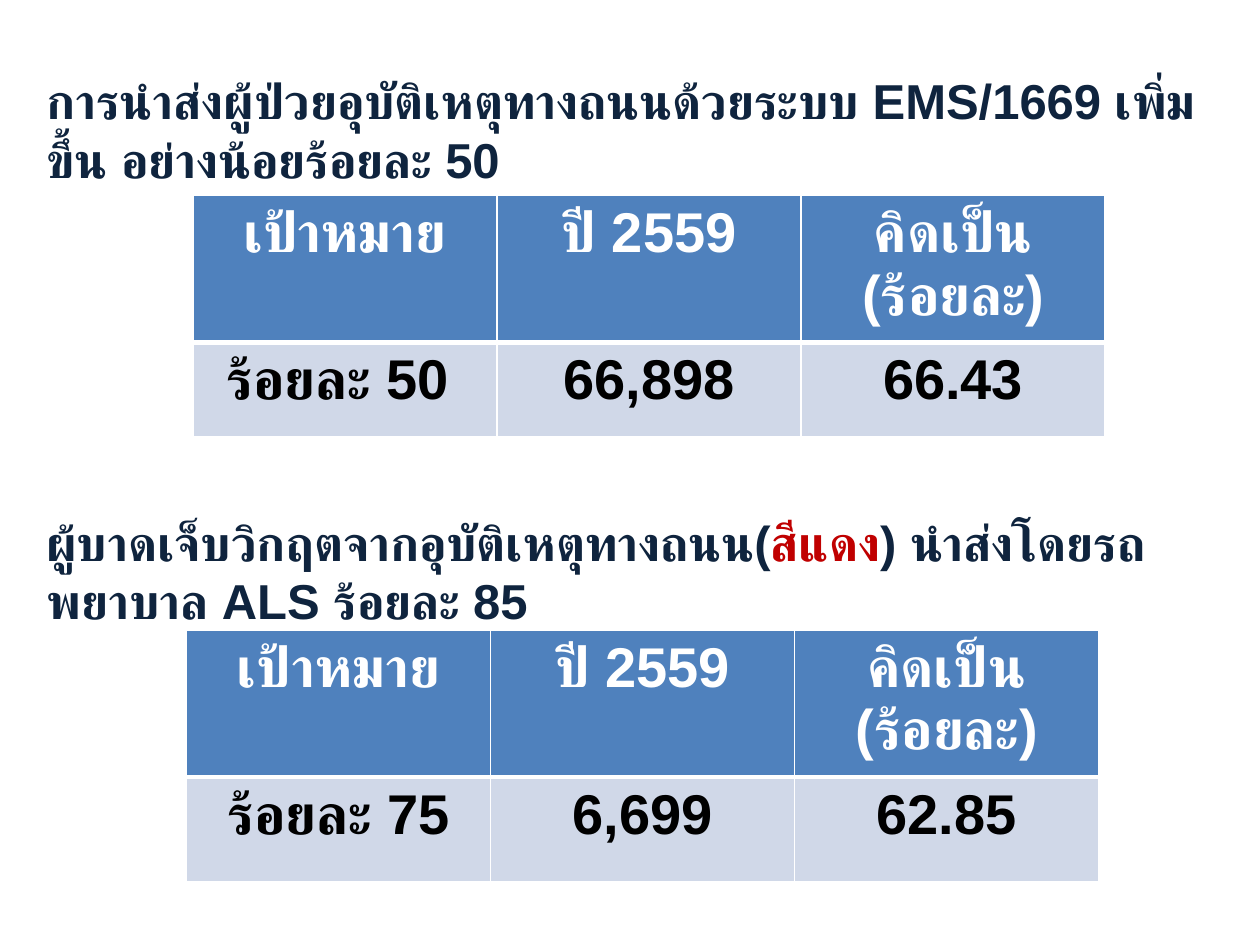
from lxml.etree import SubElement
from pptx import Presentation
from pptx.dml.color import RGBColor
from pptx.enum.text import PP_ALIGN
from pptx.oxml.ns import qn
from pptx.util import Cm, Pt

FONT = "Arial"
NAVY, RED, WHITE, BLACK = "0F243E", "C00000", "FFFFFF", "000000"
HEADER_FILL, BODY_FILL = "4F81BD", "D0D8E8"

HEADINGS = ["เป้าหมาย", "ปี 2559", "คิดเป็น (ร้อยละ)"]
# Positions and row heights are in centimetres.
SECTIONS = [
    {
        "goal": [("การนำส่งผู้ป่วยอุบัติเหตุทางถนนด้วยระบบ EMS/1669 เพิ่มขึ้น อย่างน้อยร้อยละ 50", NAVY)],
        "goal_top": 1.3,
        "results": ["ร้อยละ 50 ", "66,898", "66.43"],
        "table_at": (3.89, 3.94),
        "row_height": 1.9,
    },
    {
        "goal": [
            ("ผู้บาดเจ็บวิกฤตจากอุบัติเหตุทางถนน(", NAVY),
            ("สีแดง", RED),
            (") นำส่งโดยรถพยาบาล ALS ร้อยละ 85", NAVY),
        ],
        "goal_top": 10.2,
        "results": ["ร้อยละ 75", "6,699", "62.85"],
        "table_at": (3.76, 12.7),
        "row_height": 2.1,
    },
]
GOAL_LEFT, GOAL_WIDTH, GOAL_HEIGHT = 0.69, 23.8, 2.6
COLUMN_WIDTH = 6.13


def color(value):
    return RGBColor.from_string(value)


def add_run(paragraph, text, size, text_color):
    """Add a bold run whose font also covers Thai script."""
    run = paragraph.add_run()
    run.text = text
    run.font.size = Pt(size)
    run.font.bold = True
    run.font.name = FONT
    run.font.color.rgb = color(text_color)
    SubElement(run.font._element, qn("a:cs"), typeface=FONT)


def add_borders(cell, widths):
    """Draw white borders; widths are points for left, right, top, bottom."""
    properties = cell._tc.get_or_add_tcPr()
    for side, width in zip("LRTB", widths):
        line = SubElement(properties, qn(f"a:ln{side}"), w=str(Pt(width)))
        fill = SubElement(line, qn("a:solidFill"))
        SubElement(fill, qn("a:srgbClr"), val=WHITE)


def add_goal(slide, section):
    box = slide.shapes.add_textbox(
        Cm(GOAL_LEFT), Cm(section["goal_top"]), Cm(GOAL_WIDTH), Cm(GOAL_HEIGHT))
    box.text_frame.word_wrap = True
    for text, text_color in section["goal"]:
        add_run(box.text_frame.paragraphs[0], text, 28, text_color)


def add_results(slide, section):
    rows = [
        (HEADINGS, HEADER_FILL, WHITE, (1, 1, 1, 3)),
        (section["results"], BODY_FILL, BLACK, (1, 1, 3, 1)),
    ]
    left, top = section["table_at"]
    table = slide.shapes.add_table(
        len(rows), len(HEADINGS), Cm(left), Cm(top),
        Cm(COLUMN_WIDTH * len(HEADINGS)), Cm(section["row_height"] * len(rows))).table
    for column in table.columns:
        column.width = Cm(COLUMN_WIDTH)
    for row, (texts, fill, text_color, borders) in zip(table.rows, rows):
        row.height = Cm(section["row_height"])
        for cell, text in zip(row.cells, texts):
            add_borders(cell, borders)
            cell.fill.solid()
            cell.fill.fore_color.rgb = color(fill)
            paragraph = cell.text_frame.paragraphs[0]
            paragraph.alignment = PP_ALIGN.CENTER
            add_run(paragraph, text, 32, text_color)


def main():
    presentation = Presentation()
    presentation.slide_width, presentation.slide_height = Cm(25.4), Cm(19.05)
    slide = presentation.slides.add_slide(presentation.slide_layouts[6])
    for section in SECTIONS:
        add_goal(slide, section)
        add_results(slide, section)
    presentation.save("out.pptx")


if __name__ == "__main__":
    main()
